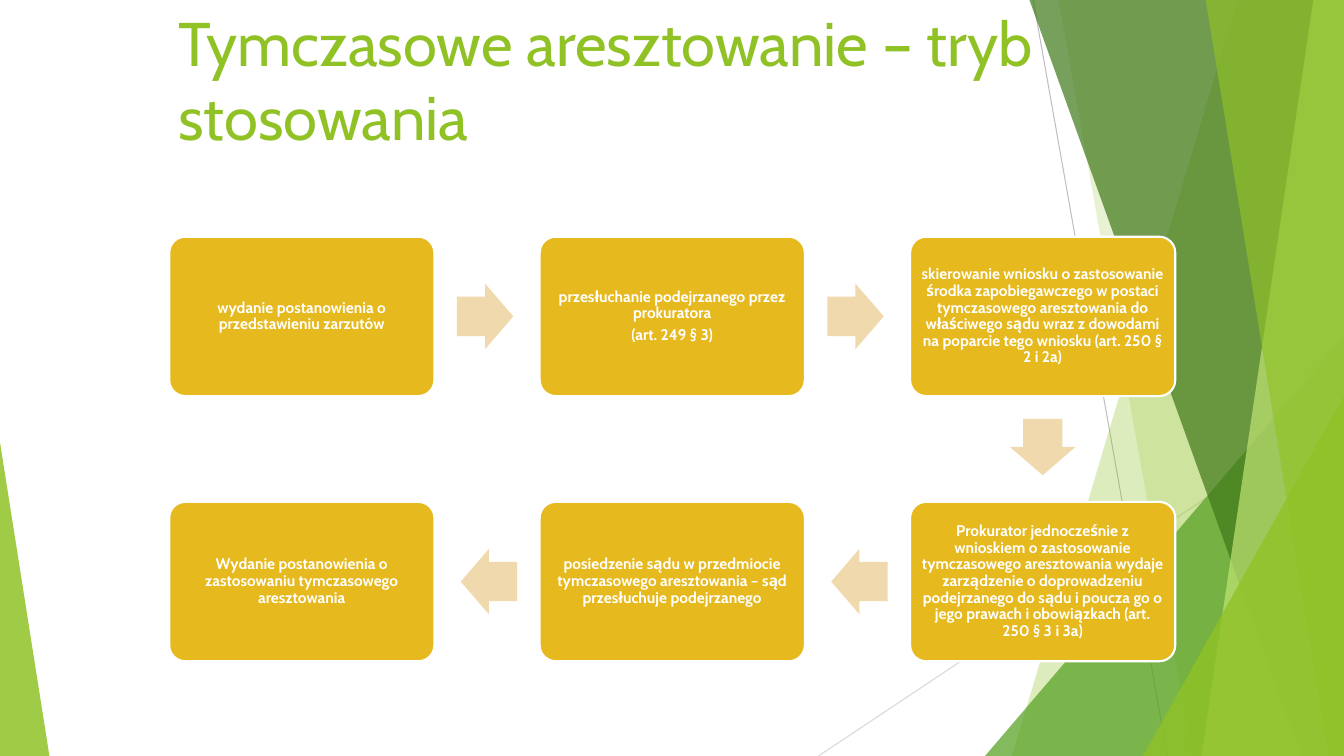
from lxml.etree import SubElement
from pptx import Presentation
from pptx.dml.color import RGBColor
from pptx.enum.shapes import MSO_CONNECTOR, MSO_SHAPE
from pptx.enum.text import MSO_ANCHOR, PP_ALIGN
from pptx.oxml.ns import qn
from pptx.util import Pt

WHITE = RGBColor(0xFF, 0xFF, 0xFF)
LIME = RGBColor(0x90, 0xC2, 0x26)
PALE_LIME = RGBColor(0xC0, 0xE4, 0x74)
GREEN = RGBColor(0x54, 0xA0, 0x21)
DARK_GREEN = RGBColor(0x3F, 0x78, 0x19)
GOLD = RGBColor(0xE6, 0xB9, 0x1E)
SAND = RGBColor(0xF0, 0xD9, 0xAC)
GREY = RGBColor(0xBF, 0xBF, 0xBF)
LIGHT_GREY = RGBColor(0xD9, 0xD9, 0xD9)

SLIDE_WIDTH, SLIDE_HEIGHT = 960, 540
BOX_WIDTH, BOX_HEIGHT = 189.4, 113.8
ARROW_WIDTH, ARROW_HEIGHT = 40.3, 46.8
ARROW_SHIFT = 1.4  # arrows sit slightly nearer the box they leave
FIRST_CENTER_X, FIRST_CENTER_Y = 215.6, 226
COLUMN_STEP, ROW_STEP = 264.6, 189.4

TITLE = "Tymczasowe aresztowanie – tryb stosowania"
# column, row, paragraphs, in the order of the procedure
STEPS = [
    (0, 0, ["wydanie postanowienia o przedstawieniu zarzutów"]),
    (1, 0, ["przesłuchanie podejrzanego przez prokuratora", "(art. 249 § 3)"]),
    (2, 0, ["skierowanie wniosku o zastosowanie środka zapobiegawczego w postaci "
            "tymczasowego aresztowania do właściwego sądu wraz z dowodami na "
            "poparcie tego wniosku (art. 250 § 2 i 2a)"]),
    (2, 1, ["Prokurator jednocześnie z wnioskiem o zastosowanie tymczasowego "
            "aresztowania wydaje zarządzenie o doprowadzeniu podejrzanego do sądu "
            "i poucza go o jego prawach i obowiązkach (art. 250 § 3 i 3a)"]),
    (1, 1, ["posiedzenie sądu w przedmiocie tymczasowego aresztowania – sąd "
            "przesłuchuje podejrzanego"]),
    (0, 1, ["Wydanie postanowienia o zastosowaniu tymczasowego aresztowania"]),
]


def write_text(frame, paragraphs, size, color, font="Cabin", bold=False,
               align=PP_ALIGN.LEFT, anchor=MSO_ANCHOR.TOP, line_spacing=1.0,
               space_after=0):
    frame.word_wrap = True
    frame.vertical_anchor = anchor
    for index, text in enumerate(paragraphs):
        paragraph = frame.add_paragraph() if index else frame.paragraphs[0]
        paragraph.alignment = align
        paragraph.line_spacing = line_spacing
        paragraph.space_after = Pt(space_after)
        run = paragraph.add_run()
        run.text = text
        run.font.name = font
        run.font.size = Pt(size)
        run.font.bold = bold
        run.font.color.rgb = color


class SlidePainter:
    def __init__(self, slide):
        self.slide = slide
        self.shapes = slide.shapes

    def paint(self, shape, color, opacity=100):
        shape.shadow.inherit = False
        shape.fill.solid()
        shape.fill.fore_color.rgb = color
        shape.line.fill.background()
        if opacity < 100:
            fill_color = shape.fill._xPr.find(qn("a:solidFill"))[0]
            SubElement(fill_color, qn("a:alpha"), val=str(opacity * 1000))

    def hairline(self, start, end, color):
        line = self.shapes.add_connector(
            MSO_CONNECTOR.STRAIGHT, *(Pt(value) for value in start + end))
        line.line.color.rgb = color
        line.line.width = Pt(0.75)
        SubElement(line._element.spPr, qn("a:effectLst"))

    def band(self, top_x, bottom_x, color, opacity):
        """Full-height area between a slanted left edge and the slide's right edge."""
        top = -0.7
        builder = self.shapes.build_freeform(Pt(top_x), Pt(top))
        corners = [(SLIDE_WIDTH, top), (SLIDE_WIDTH, SLIDE_HEIGHT),
                   (bottom_x, SLIDE_HEIGHT)]
        builder.add_line_segments([(Pt(x), Pt(y)) for x, y in corners], close=True)
        self.paint(builder.convert_to_shape(), color, opacity)

    def corner_triangle(self, left, width, height, apex, color, opacity):
        """Triangle standing on the slide's bottom edge; apex 0 is left, 1 is right."""
        triangle = self.shapes.add_shape(
            MSO_SHAPE.ISOSCELES_TRIANGLE, Pt(left), Pt(SLIDE_HEIGHT - height),
            Pt(width), Pt(height))
        triangle.adjustments[0] = apex
        self.paint(triangle, color, opacity)

    def title(self, text):
        box = self.shapes.add_textbox(Pt(120.4), Pt(0), Pt(720), Pt(118))
        write_text(box.text_frame, [text], size=44, color=LIME)

    def centered_shape(self, kind, center, width, height):
        return self.shapes.add_shape(
            kind, Pt(center[0] - width / 2), Pt(center[1] - height / 2),
            Pt(width), Pt(height))

    def step_box(self, center, paragraphs):
        box = self.centered_shape(MSO_SHAPE.ROUNDED_RECTANGLE, center,
                                  BOX_WIDTH, BOX_HEIGHT)
        box.adjustments[0] = 0.1
        self.paint(box, GOLD)
        box.line.color.rgb = WHITE
        box.line.width = Pt(1.5)
        frame = box.text_frame
        frame.margin_left = frame.margin_right = Pt(3.6)
        frame.margin_top = frame.margin_bottom = Pt(3.6)
        write_text(frame, paragraphs, size=11, color=WHITE, bold=True,
                   align=PP_ALIGN.CENTER, anchor=MSO_ANCHOR.MIDDLE,
                   line_spacing=0.9, space_after=3.85)

    def step_arrow(self, start, end):
        """Block arrow between two box centres on the same row or column."""
        across = (end[0] > start[0]) - (end[0] < start[0])
        down = (end[1] > start[1]) - (end[1] < start[1])
        center = ((start[0] + end[0]) / 2 - ARROW_SHIFT * across,
                  (start[1] + end[1]) / 2 - ARROW_SHIFT * down)
        arrow = self.centered_shape(MSO_SHAPE.RIGHT_ARROW, center,
                                    ARROW_WIDTH, ARROW_HEIGHT)
        arrow.adjustments[0] = 0.6
        arrow.adjustments[1] = 0.5
        arrow.rotation = 90 if down else (0 if across > 0 else 180)
        self.paint(arrow, SAND)


def draw_background(painter):
    painter.hairline((738, 0), (833.8, SLIDE_HEIGHT), GREY)
    painter.hairline((SLIDE_WIDTH, 290.2), (584.6, SLIDE_HEIGHT), LIGHT_GREY)
    painter.band(884.2, 722.9, LIME, 30)
    painter.band(756, 851.8, LIME, 20)
    painter.corner_triangle(703.6, 256.4, 300, 1, GREEN, 72)
    painter.band(735.1, 929.5, DARK_GREEN, 70)
    painter.band(938.2, 858.2, PALE_LIME, 70)
    painter.band(861.1, 949, LIME, 65)
    painter.corner_triangle(816.5, 143.5, 257, 1, LIME, 80)
    painter.corner_triangle(0, 35.3, 224, 0, LIME, 85)


def main():
    presentation = Presentation()
    presentation.slide_width = Pt(SLIDE_WIDTH)
    presentation.slide_height = Pt(SLIDE_HEIGHT)
    painter = SlidePainter(presentation.slides.add_slide(presentation.slide_layouts[6]))
    draw_background(painter)
    painter.title(TITLE)
    previous = None
    for column, row, paragraphs in STEPS:
        center = (FIRST_CENTER_X + column * COLUMN_STEP,
                  FIRST_CENTER_Y + row * ROW_STEP)
        if previous:
            painter.step_arrow(previous, center)
        painter.step_box(center, paragraphs)
        previous = center
    presentation.save("out.pptx")


if __name__ == "__main__":
    main()
